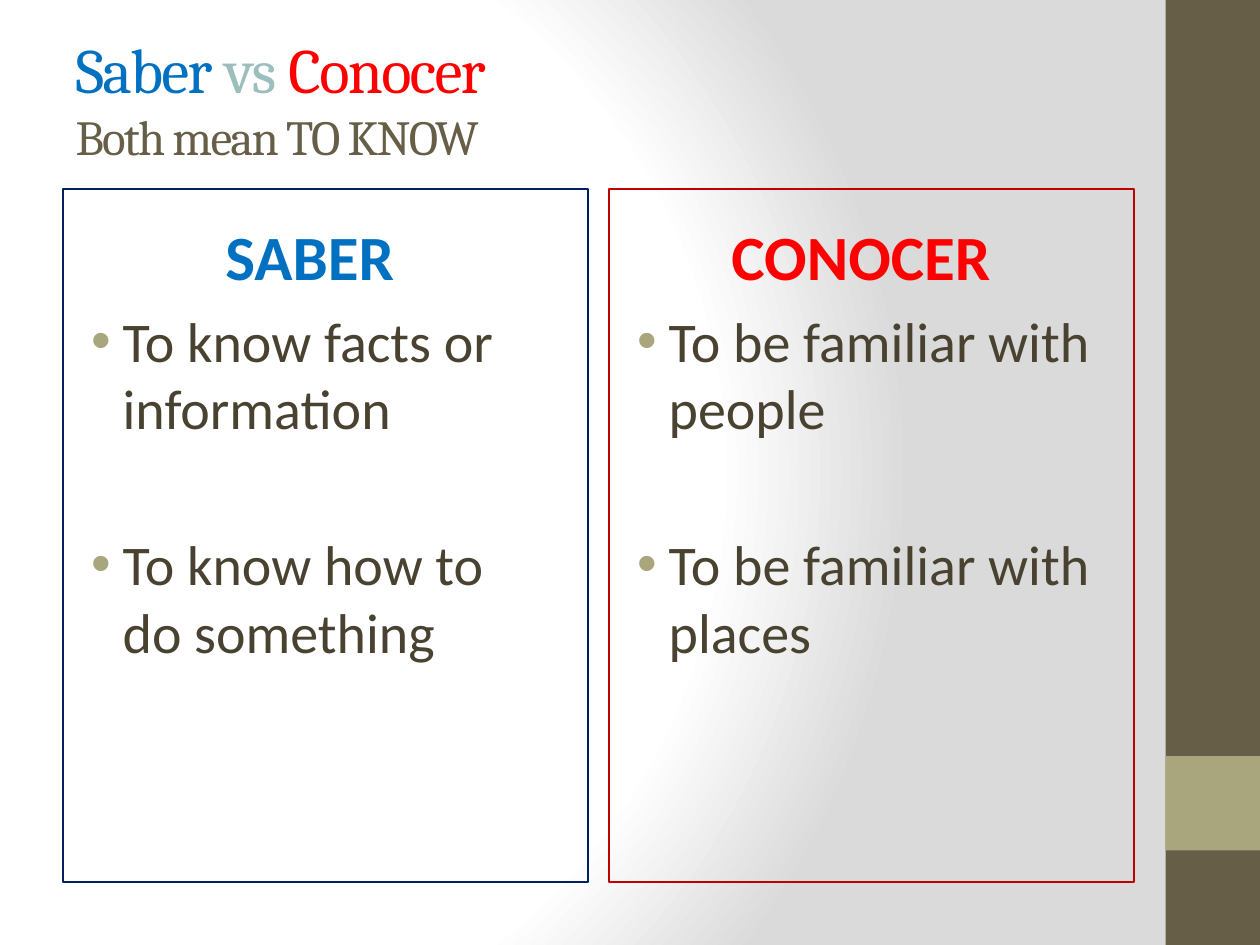
from lxml import etree
from pptx import Presentation
from pptx.dml.color import RGBColor
from pptx.enum import shapes, text
from pptx.oxml.ns import qn
from pptx.util import Pt

BROWN, TAN, INK = "675E47", "A9A57C", "494231"
BLUE, RED, SAGE = "0070C0", "FF0000", "9CBEBD"


def rgb(code):
    return RGBColor.from_string(code)


def node(base, tag, **attrs):
    return etree.SubElement(base, qn(tag), attrs)


def write(par, words, size=32, font="Calibri", color=INK, bold=False, track=0):
    run = par.add_run()
    run.text = words
    face = run.font
    face.name, face.size, face.bold = font, Pt(size), bold
    face.color.rgb = rgb(color)
    if track:
        run._r.get_or_add_rPr().set("spc", str(track * 100))


class Deck:
    head, body = "Cambria", "Calibri"

    def __init__(self):
        self.file = Presentation()
        self.file.slide_width, self.file.slide_height = Pt(720), Pt(540)
        self.slide = self.file.slides.add_slide(self.file.slide_layouts[5])

    def glow(self):
        """Give the slide its round white-to-grey background."""
        fill = self.slide.background.fill
        fill.gradient()
        grad = self.slide._element.cSld.find(".//" + qn("a:gradFill"))
        for part in list(grad):
            grad.remove(part)
        stops = node(grad, "a:gsLst")
        for spot, code in ((0, "FFFFFF"), (75, "FFFFFF"), (100, "DADADA")):
            stop = node(stops, "a:gs", pos=str(spot * 1000))
            node(stop, "a:srgbClr", val=code)
        shade = node(grad, "a:path")
        shade.set("path", "circle")
        node(shade, "a:fillToRect", l="20000", t="50000", r="100000", b="50000")

    def rect(self, left, top, width, height, fill=None, line=None):
        box = self.slide.shapes.add_shape(
            shapes.MSO_SHAPE.RECTANGLE, Pt(left), Pt(top), Pt(width), Pt(height))
        box.shadow.inherit = False
        if fill:
            box.fill.solid()
            box.fill.fore_color.rgb = rgb(fill)
        else:
            box.fill.background()
        if line:
            box.line.color.rgb = rgb(line)
            box.line.width = Pt(1.5)
        else:
            box.line.fill.background()

    def title(self, lines):
        box = self.slide.shapes.title
        box.left, box.top, box.width, box.height = Pt(36), Pt(14), Pt(648), Pt(84)
        frame = box.text_frame
        frame.auto_size = text.MSO_AUTO_SIZE.NONE
        frame.vertical_anchor = text.MSO_ANCHOR.MIDDLE
        par = frame.paragraphs[0]
        par.alignment = text.PP_ALIGN.LEFT
        for row, runs in enumerate(lines):
            if row:
                par.add_line_break()
            for words, size, color in runs:
                write(par, words, size, self.head, color, track=-1)

    def frame(self, left, top, width, height):
        box = self.slide.shapes.add_textbox(Pt(left), Pt(top), Pt(width), Pt(height))
        box.text_frame.word_wrap = True
        return box.text_frame

    def label(self, words, color, left, width, inset):
        frame = self.frame(left, 120.5, width, 50.4)
        frame.vertical_anchor = text.MSO_ANCHOR.BOTTOM
        frame.margin_right = Pt(inset)
        par = frame.paragraphs[0]
        par.alignment = text.PP_ALIGN.CENTER
        write(par, words, 36, self.body, color, bold=True)

    def bullets(self, items, left):
        frame = self.frame(left, 171.4, 288, 311)
        for count, words in enumerate(items):
            par = frame.add_paragraph() if count else frame.paragraphs[0]
            par.space_before = Pt(51 if count else 0)
            write(par, words, font=self.body)
            props = par._p.get_or_add_pPr()
            props.set("marL", str(Pt(27)))
            props.set("indent", str(Pt(-18)))
            node(node(props, "a:buClr"), "a:srgbClr", val=TAN)
            node(props, "a:buFont", typeface="Arial")
            node(props, "a:buChar", char="•")


def main():
    deck = Deck()
    deck.glow()
    deck.rect(666, 0, 54, 540, fill=BROWN)
    deck.rect(666, 432, 54, 54, fill=TAN)
    deck.title([
        [("Saber ", 36, BLUE), ("vs ", 36, SAGE), ("Conocer", 36, RED)],
        [("Both mean TO KNOW", 28, BROWN)],
    ])
    deck.label("SABER", BLUE, 42, 318, inset=55)
    deck.label("CONOCER", RED, 348, 288, inset=7.2)
    columns = (
        (36, "002060", ("To know facts or information", "To know how to do something")),
        (348, "C00000", ("To be familiar with people", "To be familiar with places")),
    )
    for left, edge, items in columns:
        deck.bullets(items, left)
        deck.rect(left, 108, 300, 396, line=edge)
    deck.file.save("out.pptx")


if __name__ == "__main__":
    main()
